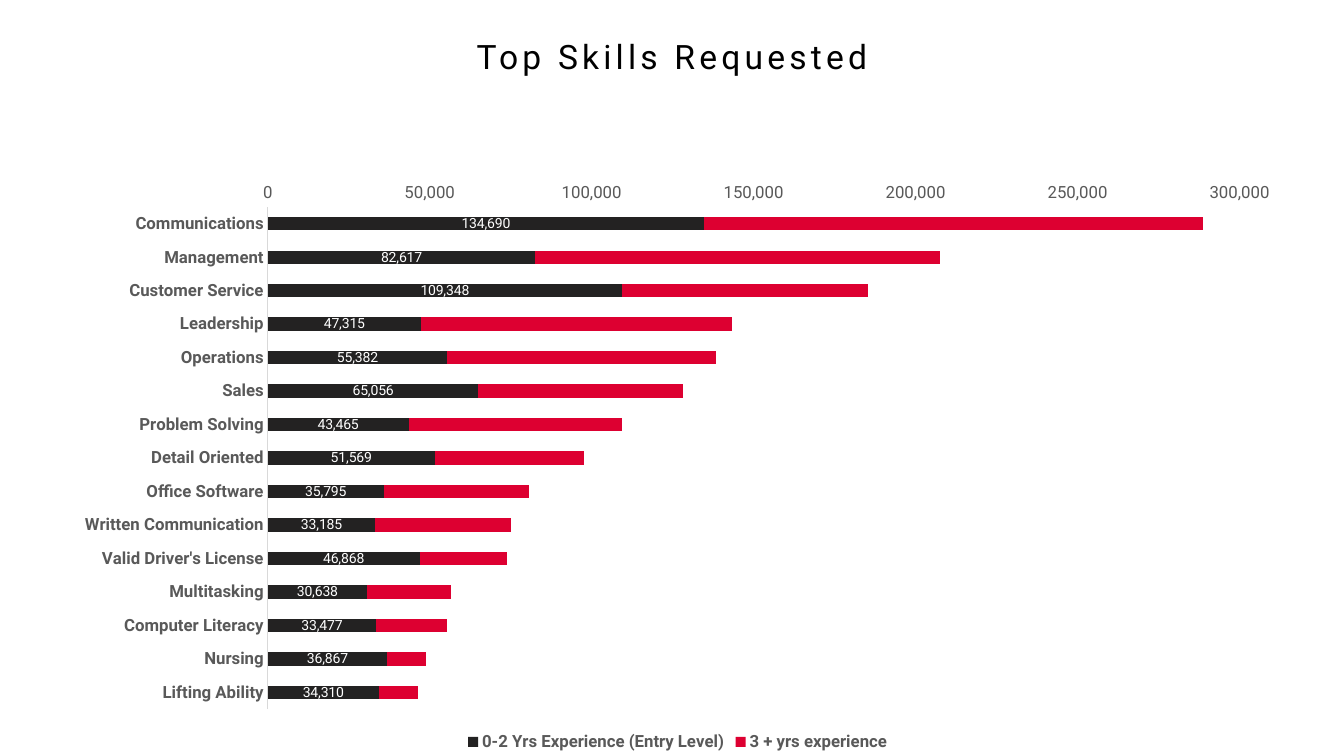
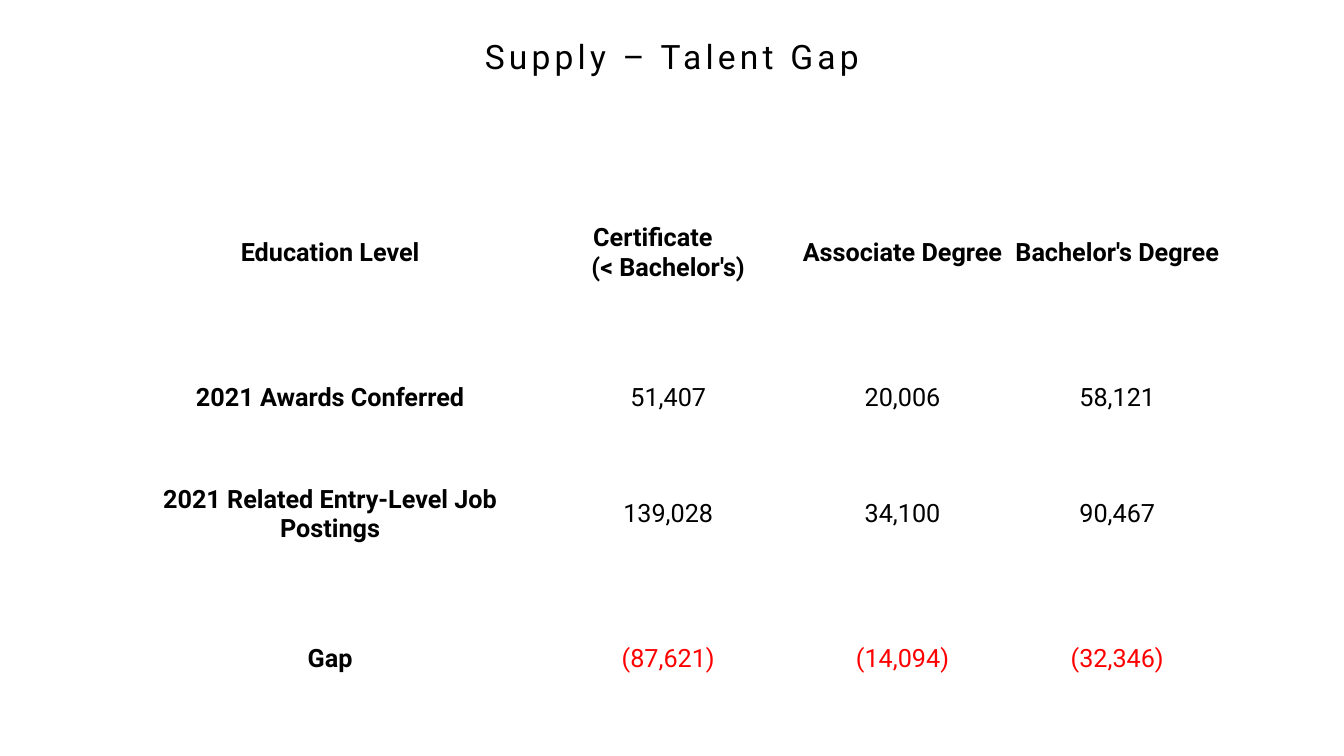
from lxml import etree
from pptx import Presentation
from pptx.chart.data import CategoryChartData
from pptx.dml.color import RGBColor
from pptx.enum.chart import XL_CHART_TYPE as ChartType, XL_LEGEND_POSITION as LegendPosition
from pptx.enum.chart import XL_TICK_MARK as TickMark
from pptx.enum.text import MSO_ANCHOR as Anchor, PP_ALIGN as Align
from pptx.oxml import parse_xml
from pptx.oxml.ns import nsdecls, qn
from pptx.util import Cm, Pt

FONT = "Roboto"
BLACK, WHITE, GREY, RULE = "000000", "FFFFFF", "595959", "D9D9D9"
DARK, CRIMSON, RED = "232222", "DD0031", "FF0000"


def rgb(value):
    return RGBColor.from_string(value)


def write(frame, text, size=18, color=BLACK, bold=False, spacing=0):
    """Fill a text frame with centred text, one paragraph per line."""
    frame.word_wrap = True
    for number, line in enumerate(text.split("\n")):
        para = frame.add_paragraph() if number else frame.paragraphs[0]
        para.alignment = Align.CENTER
        span = para.add_run()
        span.text = line
        span.font.name, span.font.size, span.font.bold = FONT, Pt(size), bold
        span.font.color.rgb = rgb(color)
        if spacing:
            span.font._element.set("spc", str(spacing * 100))


deck = Presentation()
deck.slide_width, deck.slide_height = Cm(33.87), Cm(19.05)

# Slides with their shared title style
pages = []
for title in ("Top Skills Requested", "Supply – Talent Gap"):
    page = deck.slides.add_slide(deck.slide_layouts[6])
    box = page.shapes.add_textbox(0, Cm(0.79), deck.slide_width, Cm(1.27))
    write(box.text_frame, title, size=24, spacing=3)
    pages.append(page)
skills_page, gap_page = pages

# Skills: entry-level and experienced postings
skills = [
    ("Communications", 134690, 154000),
    ("Management", 82617, 125000),
    ("Customer Service", 109348, 76000),
    ("Leadership", 47315, 96000),
    ("Operations", 55382, 83000),
    ("Sales", 65056, 63000),
    ("Problem Solving", 43465, 66000),
    ("Detail Oriented", 51569, 46000),
    ("Office Software", 35795, 45000),
    ("Written Communication", 33185, 42000),
    ("Valid Driver's License", 46868, 27000),
    ("Multitasking", 30638, 26000),
    ("Computer Literacy", 33477, 22000),
    ("Nursing", 36867, 12000),
    ("Lifting Ability", 34310, 12000),
]
names, entry_level, experienced = zip(*skills)
data = CategoryChartData(number_format="#,##0")
data.categories = names
data.add_series("0-2 Yrs Experience (Entry Level)", entry_level)
data.add_series("3 + yrs experience", experienced)
chart = skills_page.shapes.add_chart(
    ChartType.BAR_STACKED, Cm(1.52), Cm(4.32), Cm(31.12), Cm(14.73), data).chart
chart.has_title = False
chart.font.name, chart.font.size = FONT, Pt(10)

# Bars and labels
plot = chart.plots[0]
plot.gap_width, plot.overlap, plot.vary_by_categories = 150, 100, False
for series, color in zip(plot.series, (DARK, CRIMSON)):
    series.format.fill.solid()
    series.format.fill.fore_color.rgb = rgb(color)
labels = plot.series[0].data_labels
labels.show_value = True
labels.number_format, labels.number_format_is_linked = "#,##0", False
labels.font.name, labels.font.size = FONT, Pt(10)
labels.font.color.rgb = rgb(WHITE)

# Axes and legend
categories, values = chart.category_axis, chart.value_axis
chart.has_legend = True
chart.legend.position = LegendPosition.BOTTOM
chart.legend.include_in_layout = False
for font, bold in ((categories.tick_labels.font, True),
                   (values.tick_labels.font, False),
                   (chart.legend.font, True)):
    font.name, font.size, font.bold = FONT, Pt(12), bold
    font.color.rgb = rgb(GREY)
for axis in (categories, values):
    axis.has_major_gridlines = False
    axis.major_tick_mark = axis.minor_tick_mark = TickMark.NONE
categories.reverse_order = True
categories.format.line.color.rgb = rgb(RULE)
categories.format.line.width = Pt(0.75)
values.minimum_scale, values.maximum_scale, values.major_unit = 0, 300000, 50000
values.tick_labels.number_format = "#,##0"
values.tick_labels.number_format_is_linked = False
values.format.line.fill.background()

# Plot area as shares of the chart
plot_area = chart._chartSpace.chart.plotArea
for old in plot_area.findall(qn("c:layout")):
    plot_area.remove(old)
layout = parse_xml(f"<c:layout {nsdecls('c')}><c:manualLayout/></c:layout>")
for tag, value in (("layoutTarget", "inner"), ("xMode", "edge"), ("yMode", "edge"),
                   ("x", 0.168), ("y", 0.061), ("w", 0.787), ("h", 0.859)):
    etree.SubElement(layout[0], qn(f"c:{tag}")).set("val", str(value))
plot_area.insert(0, layout)

# Talent gap table
rows = [
    ("Education Level", "Certificate\n(< Bachelor's)", "Associate Degree", "Bachelor's Degree"),
    ("2021 Awards Conferred", "51,407", "20,006", "58,121"),
    ("2021 Related Entry-Level Job Postings", "139,028", "34,100", "90,467"),
    ("Gap", "(87,621)", "(14,094)", "(32,346)"),
]
widths = (10.64, 6.4, 5.41, 5.41)
heights = (4.29, 3, 2.87, 4.42)
table = gap_page.shapes.add_table(
    len(rows), len(widths), Cm(3), Cm(4.22), Cm(sum(widths)), Cm(sum(heights))).table
table.first_row = table.horz_banding = False
for column, width in zip(table.columns, widths):
    column.width = Cm(width)
for row, height in zip(table.rows, heights):
    row.height = Cm(height)
for r, texts in enumerate(rows):
    for c, text in enumerate(texts):
        cell = table.cell(r, c)
        cell.vertical_anchor = Anchor.MIDDLE
        cell.margin_left = cell.margin_right = cell.margin_top = Cm(0.03)
        cell.margin_bottom = 0
        for side in ("lnL", "lnR", "lnT", "lnB"):
            cell._tc.get_or_add_tcPr().append(parse_xml(
                f'<a:{side} {nsdecls("a")} w="{Pt(1)}"><a:solidFill>'
                f'<a:srgbClr val="{WHITE}"/></a:solidFill></a:{side}>'))
        cell.fill.background()
        write(cell.text_frame, text, bold=r == 0 or c == 0,
              color=RED if text.startswith("(") else BLACK)

# The certificate heading lines up with the left edge of its second line
heading = table.cell(0, 1).text_frame.paragraphs[0]
heading.alignment = Align.LEFT
heading._p.get_or_add_pPr().set("marL", str(Cm(1.28)))

deck.save("out.pptx")
